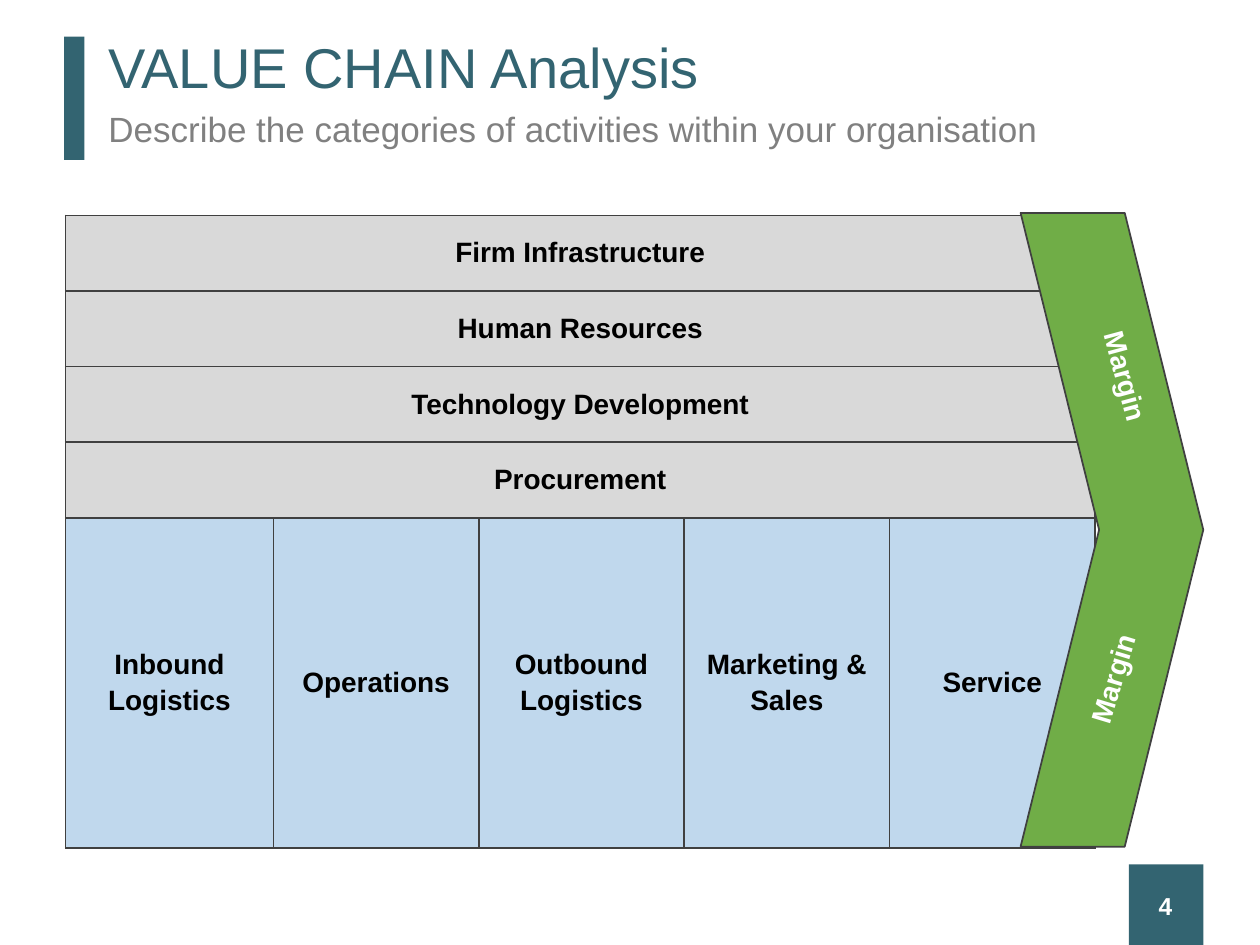
from lxml import etree
from pptx import Presentation
from pptx import util as u
from pptx.dml.color import RGBColor
from pptx.enum import shapes, text
from pptx.oxml import ns

TEAL = RGBColor(0x33, 0x64, 0x71)
GREY = RGBColor(0x80, 0x80, 0x80)
DARK = RGBColor(0x40, 0x40, 0x40)
PALE = RGBColor(0xD9, 0xD9, 0xD9)
BLUE = RGBColor(0xC0, 0xD8, 0xED)
GREEN = RGBColor(0x70, 0xAD, 0x47)
BLACK = RGBColor(0, 0, 0)
WHITE = RGBColor(255, 255, 255)

LEFT, MID = text.PP_ALIGN.LEFT, text.PP_ALIGN.CENTER
KIND = shapes.MSO_SHAPE

SUPPORT = ["Firm Infrastructure", "Human Resources",
           "Technology Development", "Procurement"]
PRIMARY = ["Inbound\nLogistics", "Operations", "Outbound\nLogistics",
           "Marketing &\nSales", "Service"]


def put(obj, vals):
    """Set each attribute named in vals on obj."""
    for name, val in vals.items():
        setattr(obj, name, val)


def node(base, tag, **attrs):
    return etree.SubElement(base, ns.qn(tag), attrs)


class Deck:
    """Holds the slide and the style shared by its elements."""

    font = "Arial"
    line = u.Pt(1)

    def __init__(self, wide, high):
        self.prs = Presentation()
        put(self.prs, {"slide_width": u.Inches(wide), "slide_height": u.Inches(high)})
        self.slide = self.prs.slides.add_slide(self.prs.slide_layouts[1])

    def letter(self, frame, words, size, color, bold=False, **para):
        """Fill a text frame and format its paragraphs and runs."""
        frame.text = words
        look = {"name": self.font, "size": u.Pt(size), "bold": bold}
        for par in frame.paragraphs:
            put(par, para)
            for run in par.runs:
                put(run.font, look)
                run.font.color.rgb = color

    def holder(self, idx, box, words, size, color, anchor, **para):
        """Fill a template placeholder, without a bullet."""
        shape = self.slide.placeholders[idx]
        put(shape, dict(zip(("left", "top", "width", "height"), map(u.Inches, box))))
        put(shape.text_frame, {"vertical_anchor": anchor, "word_wrap": True,
                               "auto_size": text.MSO_AUTO_SIZE.NONE})
        self.letter(shape.text_frame, words, size, color,
                    alignment=LEFT, line_spacing=0.9, **para)
        props = shape.text_frame.paragraphs[0]._p.get_or_add_pPr()
        for name in ("marL", "indent"):
            props.set(name, "0")
        node(props, "a:buNone")

    def shape(self, kind, box, fill, edge=None):
        shape = self.slide.shapes.add_shape(kind, *map(u.Inches, box))
        shape.shadow.inherit = False
        shape.fill.solid()
        shape.fill.fore_color.rgb = fill
        if edge is None:
            shape.line.fill.background()
        else:
            shape.line.color.rgb = edge
            shape.line.width = self.line
        return shape

    def label(self, box, words, size, turn=0, wrap=True, align=LEFT):
        shape = self.slide.shapes.add_textbox(*map(u.Inches, box))
        shape.rotation = turn
        put(shape.text_frame, {"word_wrap": wrap,
                               "vertical_anchor": text.MSO_ANCHOR.MIDDLE})
        self.letter(shape.text_frame, words, size, WHITE, True, alignment=align)

    def cell(self, cell, fill):
        pad = u.Inches(0.06)
        put(cell, {"vertical_anchor": text.MSO_ANCHOR.MIDDLE, "margin_left": pad,
                   "margin_right": pad, "margin_top": pad, "margin_bottom": pad})
        props = cell._tc.get_or_add_tcPr()
        for side in "LRTB":
            edge = node(props, "a:ln" + side, w=str(int(self.line)))
            node(node(edge, "a:solidFill"), "a:srgbClr", val=str(DARK))
        cell.fill.solid()
        cell.fill.fore_color.rgb = fill

    def chain(self, box, wides, highs):
        """Support rows across the full width, above the primary columns."""
        rows, cols = len(highs), len(wides)
        table = self.slide.shapes.add_table(rows, cols, *map(u.Inches, box)).table
        put(table, {"first_row": False, "horz_banding": False})
        for col, wide in zip(table.columns, wides):
            col.width = u.Inches(wide)
        for row, high in zip(table.rows, highs):
            row.height = u.Inches(high)
        last = rows - 1
        for row in range(rows):
            for col in range(cols):
                self.cell(table.cell(row, col), BLUE if row == last else PALE)
        for row in range(last):
            table.cell(row, 0).merge(table.cell(row, cols - 1))
        spots = [(row, 0) for row in range(last)] + [(last, col) for col in range(cols)]
        for spot, words in zip(spots, SUPPORT + PRIMARY):
            self.letter(table.cell(*spot).text_frame, words, 16, BLACK, True,
                        alignment=MID, space_after=u.Pt(3))


def main():
    deck = Deck(10, 7.5)
    deck.shape(KIND.RECTANGLE, (0.51, 0.29, 0.16, 0.98), TEAL)
    deck.shape(KIND.RECTANGLE, (8.96, 6.86, 0.59, 0.64), TEAL)
    deck.holder(0, (0.76, 0.3, 8.74, 0.52), "VALUE CHAIN Analysis",
                32, TEAL, text.MSO_ANCHOR.MIDDLE)
    deck.holder(1, (0.76, 0.84, 7.95, 0.43),
                "Describe the categories of activities within your organisation",
                20, GREY, text.MSO_ANCHOR.TOP, space_before=u.Pt(10))
    deck.label((8.96, 6.99, 0.58, 0.39), "4", 14, align=MID)
    deck.chain((0.52, 1.71, 8.19, 5.02), [1.65] + [1.63] * 4, [0.6] * 4 + [2.62])
    arrow = deck.shape(KIND.CHEVRON, (8.1, 1.69, 1.45, 5.03), GREEN, DARK)
    arrow.adjustments[0] = 0.43
    for left, top, turn in ((8.47, 2.81, 74.9), (8.36, 5.19, 286.8)):
        deck.label((left, top, 0.94, 0.37), "Margin", 16, turn, wrap=False)
    deck.prs.save("out.pptx")


if __name__ == "__main__":
    main()
